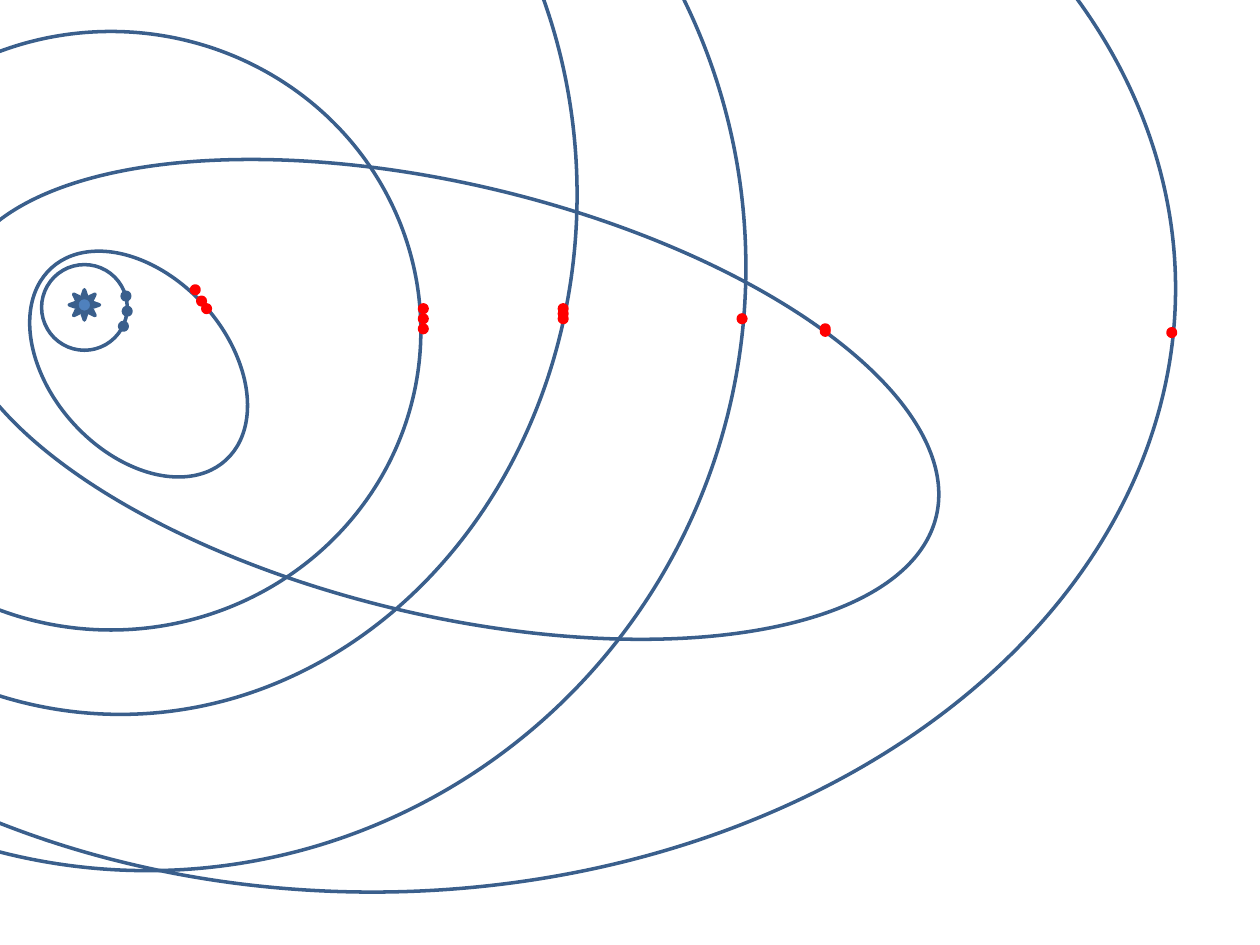
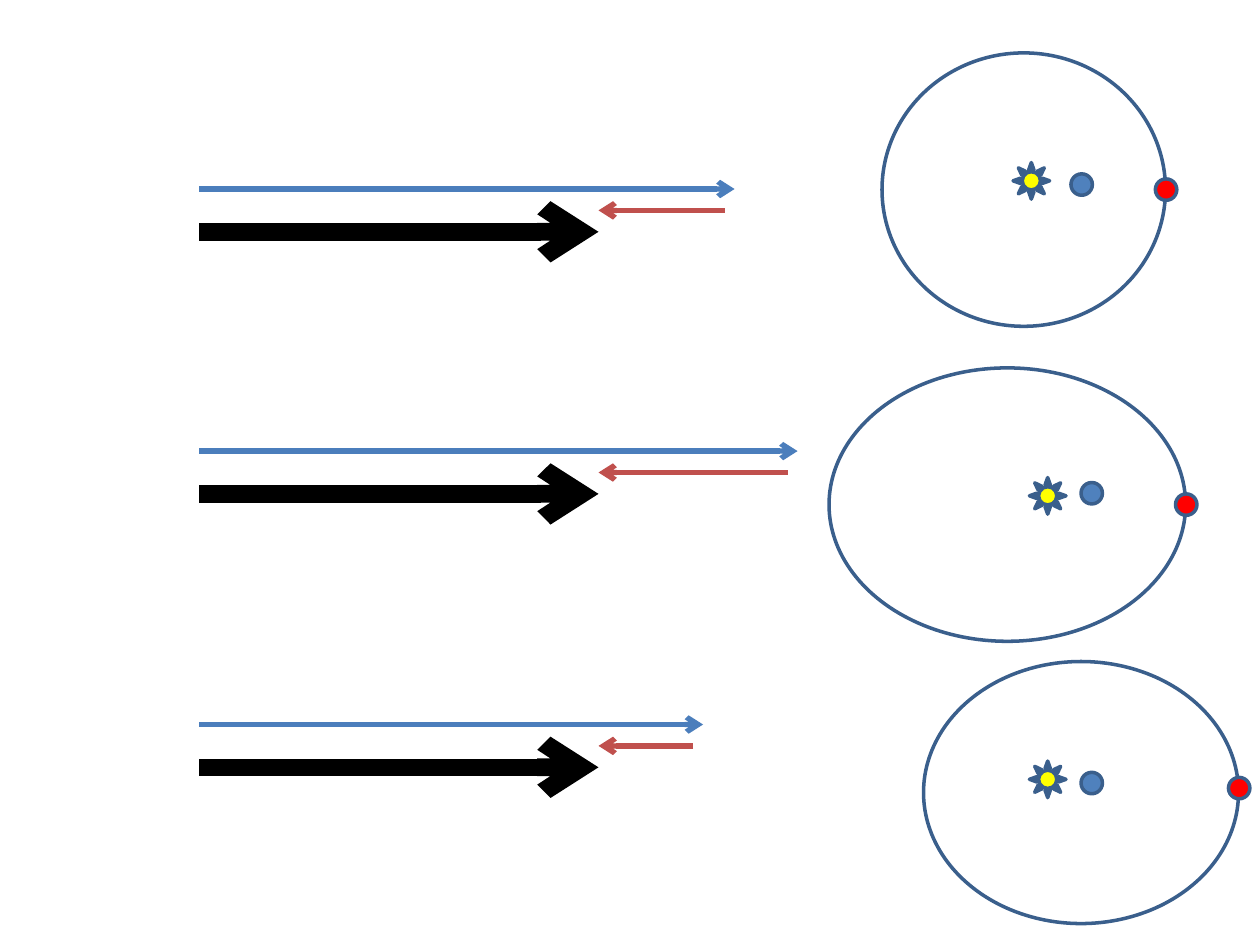
from typing import NamedTuple

from lxml import etree
from pptx import Presentation
from pptx import util as u
from pptx.dml.color import RGBColor
from pptx.enum import shapes
from pptx.oxml import ns

PX = 9144  # EMU per px, 100 px to the inch
BLANK_LAYOUT = 6
SHAPE = shapes.MSO_SHAPE
COLORS = {
    "outline": "3A5F8C",
    "blue": "4F81BD",
    "arrow_blue": "4B7EBC",
    "arrow_red": "C0504D",
    "red": "FF0000",
    "yellow": "FFFF00",
    "black": "000000",
}


class Box(NamedTuple):
    x: int
    y: int
    w: int
    h: int
    rotation: float = 0


class Dots(NamedTuple):
    fill: str
    line: str
    corners: list[tuple[int, int]]


class ArrowSet(NamedTuple):
    y: int
    blue_end: int


class System(NamedTuple):
    orbit: Box
    sun: tuple[int, int]
    planet: tuple[int, int]
    outer_y: int


# Slide 1: orbits around one sun, with observed positions
DOT = 6
SUN = Box(55, 230, 24, 24)
ORBITS = [
    Box(33, 210, 68, 68),
    Box(7, 219, 206, 140, 47.8),
    Box(-46, 146, 800, 342, 13.4),
    Box(-358, -267, 950, 958),
    Box(-267, -258, 725, 825),
    Box(-158, 25, 492, 475),
    Box(-342, -250, 1275, 958),
]
DOT_SETS = [
    Dots("blue", "outline", [(98, 244), (97, 232), (95, 256)]),
    Dots("red", "red", [
        (161, 242), (152, 227), (157, 236),
        (333, 258), (333, 242), (333, 250),
        (444, 250), (444, 242), (444, 246),
        (652, 260), (652, 258), (927, 261), (586, 250),
    ]),
]

# Slide 2: arrow sums on the left, matching systems on the right
ARROW_START, SUM_END = 158, 475
ARROW_STEP, RED_INSET = 17, 8
SUN_SIZE, PLANET_SIZE = 29, 17
ARROW_SETS = [ArrowSet(150, 583), ArrowSet(358, 633), ArrowSet(575, 558)]
SYSTEMS = [
    System(Box(700, 42, 225, 217), (804, 129), (850, 138), 142),
    System(Box(658, 292, 283, 217), (817, 379), (858, 383), 392),
    System(Box(733, 525, 250, 208), (817, 604), (858, 613), 617),
]


def color(name: str) -> RGBColor:
    return RGBColor.from_string(COLORS[name])


def add_shape(parent, kind, box: Box, fill: str | None = None,
              line: str = "outline") -> None:
    """Draw an outlined preset shape, hollow when no fill is given."""
    sp = parent.add_shape(kind, *(v * PX for v in box[:4]))
    sp.rotation = box.rotation
    sp.shadow.inherit = False
    if fill:
        sp.fill.solid()
        sp.fill.fore_color.rgb = color(fill)
    else:
        sp.fill.background()
    sp.line.color.rgb = color(line)
    sp.line.width = u.Pt(2)


def add_arrow(s, start: int, end: int, y: int, name: str, width: int) -> None:
    """Draw a horizontal arrow pointing at its end."""
    cx = s.shapes.add_connector(shapes.MSO_CONNECTOR.STRAIGHT,
                                start * PX, y * PX, end * PX, y * PX)
    cx.line.color.rgb = color(name)
    cx.line.width = u.Pt(width)
    etree.SubElement(cx.line._get_or_add_ln(), ns.qn("a:tailEnd"), type="arrow")
    etree.SubElement(cx._element.spPr, ns.qn("a:effectLst"))


def add_arrow_set(s, row: ArrowSet) -> None:
    """Draw the blue and red parts above their black sum."""
    add_arrow(s, ARROW_START, row.blue_end, row.y, "arrow_blue", 3)
    add_arrow(s, row.blue_end - RED_INSET, SUM_END, row.y + ARROW_STEP,
              "arrow_red", 3)
    add_arrow(s, ARROW_START, SUM_END, row.y + 2 * ARROW_STEP, "black", 10)


def add_system(s, system: System) -> None:
    """Group an orbit, its sun and planet, and the body on its right edge."""
    parts = s.shapes.add_group_shape().shapes
    orbit = system.orbit
    outer_x = orbit.x + orbit.w - PLANET_SIZE // 2
    add_shape(parts, SHAPE.OVAL, orbit)
    add_shape(parts, SHAPE.SUN, Box(*system.sun, SUN_SIZE, SUN_SIZE), "yellow")
    for corner, fill in ((system.planet, "blue"),
                         ((outer_x, system.outer_y), "red")):
        add_shape(parts, SHAPE.OVAL, Box(*corner, PLANET_SIZE, PLANET_SIZE), fill)


def build_orbits(prs) -> None:
    s = prs.slides.add_slide(prs.slide_layouts[BLANK_LAYOUT])
    add_shape(s.shapes, SHAPE.SUN, SUN, "blue")
    for orbit in ORBITS:
        add_shape(s.shapes, SHAPE.OVAL, orbit)
    for dots in DOT_SETS:
        for corner in dots.corners:
            add_shape(s.shapes, SHAPE.DONUT, Box(*corner, DOT, DOT),
                      dots.fill, dots.line)


def build_arrow_sums(prs) -> None:
    s = prs.slides.add_slide(prs.slide_layouts[BLANK_LAYOUT])
    for row in ARROW_SETS:
        add_arrow_set(s, row)
    for system in SYSTEMS:
        add_system(s, system)


def main() -> None:
    prs = Presentation()
    prs.slide_width, prs.slide_height = 1000 * PX, 750 * PX
    build_orbits(prs)
    build_arrow_sums(prs)
    prs.save("out.pptx")


if __name__ == "__main__":
    main()
